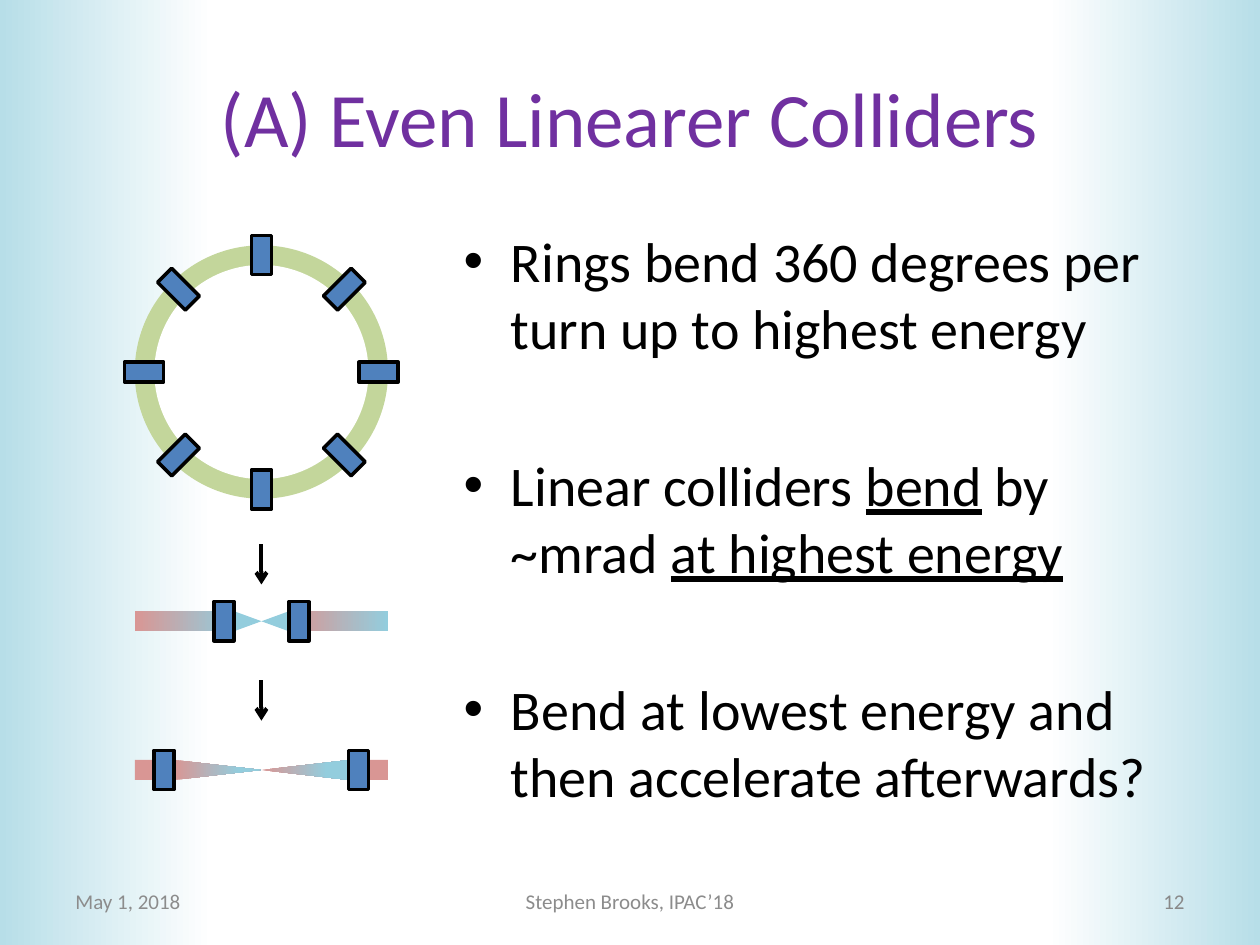
from lxml.etree import SubElement
from pptx import Presentation
from pptx.dml.color import RGBColor
from pptx.enum.shapes import MSO_CONNECTOR, MSO_SHAPE
from pptx.enum.text import MSO_ANCHOR, PP_ALIGN
from pptx.oxml.ns import qn
from pptx.util import Pt

RED, BLUE, MAGNET = "D99694", "93CDDD", "4F81BD"
RECT, OVAL, TRIANGLE = MSO_SHAPE.RECTANGLE, MSO_SHAPE.OVAL, MSO_SHAPE.ISOSCELES_TRIANGLE

prs = Presentation()
prs.slide_width, prs.slide_height = Pt(720), Pt(540)
s = prs.slides.add_slide(prs.slide_layouts[5])


def add_run(p, text, size=32, color="000000", underline=None):
    r = p.add_run()
    r.text = text
    r.font.name = "Calibri"
    r.font.size = Pt(size)
    r.font.underline = underline
    r.font.color.rgb = RGBColor.from_string(color)


def add_shape(kind, cx, cy, w, h, colors, rot=0, angle=0, end=1, line=None):
    sp = s.shapes.add_shape(kind, Pt(cx - w / 2), Pt(cy - h / 2), Pt(w), Pt(h))
    sp.rotation = rot
    sp.shadow.inherit = False
    if len(colors) == 1:
        sp.fill.solid()
        sp.fill.fore_color.rgb = RGBColor.from_string(colors[0])
    else:
        sp.fill.gradient()
        sp.fill.gradient_angle = angle
        for stop, color, pos in zip(sp.fill.gradient_stops, colors, (0, end)):
            stop.color.rgb = RGBColor.from_string(color)
            stop.position = pos
    if line:
        sp.line.color.rgb = RGBColor.from_string(line)
        sp.line.width = Pt(2)
    else:
        sp.line.fill.background()


panel_w = 121.7
for cx, rot in [(720 - panel_w / 2, 180), (panel_w / 2, 0)]:
    add_shape(RECT, cx, 270, panel_w, 540, ["B7DEE8", "FFFFFF"], rot=rot)

title = s.shapes.title
title.left, title.top, title.width, title.height = Pt(36), Pt(21.6), Pt(648), Pt(90)
title.text_frame.vertical_anchor = MSO_ANCHOR.MIDDLE
p = title.text_frame.paragraphs[0]
p.alignment = PP_ALIGN.CENTER
add_run(p, "(A) Even Linearer Colliders", size=44, color="7030A0")

bullets = [
    [("Rings bend 360 degrees per turn up to highest energy", None)],
    [("Linear colliders ", None), ("bend", True), (" by ~mrad ", None), ("at highest energy", True)],
    [("Bend at lowest energy and then accelerate afterwards?", None)],
]
tf = s.shapes.add_textbox(Pt(257.8), Pt(126), Pt(426.2), Pt(356.4)).text_frame
tf.word_wrap = True
for i, runs in enumerate(bullets):
    p = tf.add_paragraph() if i else tf.paragraphs[0]
    p.space_before = Pt(51 if i else 0)
    pPr = p._p.get_or_add_pPr()
    pPr.set("marL", str(Pt(27)))
    pPr.set("indent", str(Pt(-27)))
    SubElement(pPr, qn("a:buFont")).set("typeface", "Arial")
    SubElement(pPr, qn("a:buChar")).set("char", "•")
    for text, underline in runs:
        add_run(p, text, underline=underline)

footers = [
    (36, 168, "May 1, 2018", PP_ALIGN.LEFT, "8C8C8C"),
    (246, 228, "Stephen Brooks, IPAC’18", PP_ALIGN.CENTER, "8C8C8C"),
    (516, 168, "12", PP_ALIGN.RIGHT, "898989"),
]
for left, width, text, align, color in footers:
    tf = s.shapes.add_textbox(Pt(left), Pt(500.5), Pt(width), Pt(28.8)).text_frame
    tf.word_wrap = True
    tf.vertical_anchor = MSO_ANCHOR.MIDDLE
    p = tf.paragraphs[0]
    p.alignment = align
    add_run(p, text, size=12, color=color)

mid, ring_y = 149.4, 212.6
beam_h, magnet_h = 11.4, 22.4
add_shape(OVAL, mid, ring_y, 144.8, 144.8, ["C3D69B"])
add_shape(OVAL, mid, ring_y, 122.4, 122.4, ["FFFFFF"])
diag = 0.5 ** 0.5
directions = [(0, -1), (diag, -diag), (1, 0), (diag, diag),
              (0, 1), (-diag, diag), (-1, 0), (-diag, -diag)]
for i, (dx, dy) in enumerate(directions):
    add_shape(RECT, mid + 67 * dx, ring_y + 67 * dy, beam_h, magnet_h, [MAGNET],
              rot=180 + 45 * (i % 4), line="000000")

linear_y, late_y = 355, 440
for side, rot, angle in [(-1, 90, 90), (1, 270, 270)]:
    add_shape(RECT, mid + 44 * side, linear_y, 56.9, beam_h, [RED, BLUE])
    add_shape(TRIANGLE, mid + 7.8 * side, linear_y, beam_h, 15.6, [BLUE], rot=rot)
    add_shape(RECT, mid + 21.4 * side, linear_y, beam_h, magnet_h, [MAGNET], line="000000")

    add_shape(RECT, mid + 66.6 * side, late_y, beam_h, beam_h, [RED])
    add_shape(TRIANGLE, mid + 24.9 * side, late_y, beam_h, 49.8, [RED, BLUE],
              rot=rot, angle=angle, end=0.75)
    add_shape(RECT, mid + 55.6 * side, late_y, beam_h, magnet_h, [MAGNET], line="000000")

for y in (311, 388.8):
    arrow = s.shapes.add_connector(MSO_CONNECTOR.STRAIGHT, Pt(mid), Pt(y), Pt(mid), Pt(y + 23))
    arrow.line.color.rgb = RGBColor.from_string("000000")
    arrow.line.width = Pt(2.25)
    SubElement(arrow.line._get_or_add_ln(), qn("a:tailEnd")).set("type", "arrow")
    SubElement(arrow._element.spPr, qn("a:effectLst"))

prs.save("out.pptx")
